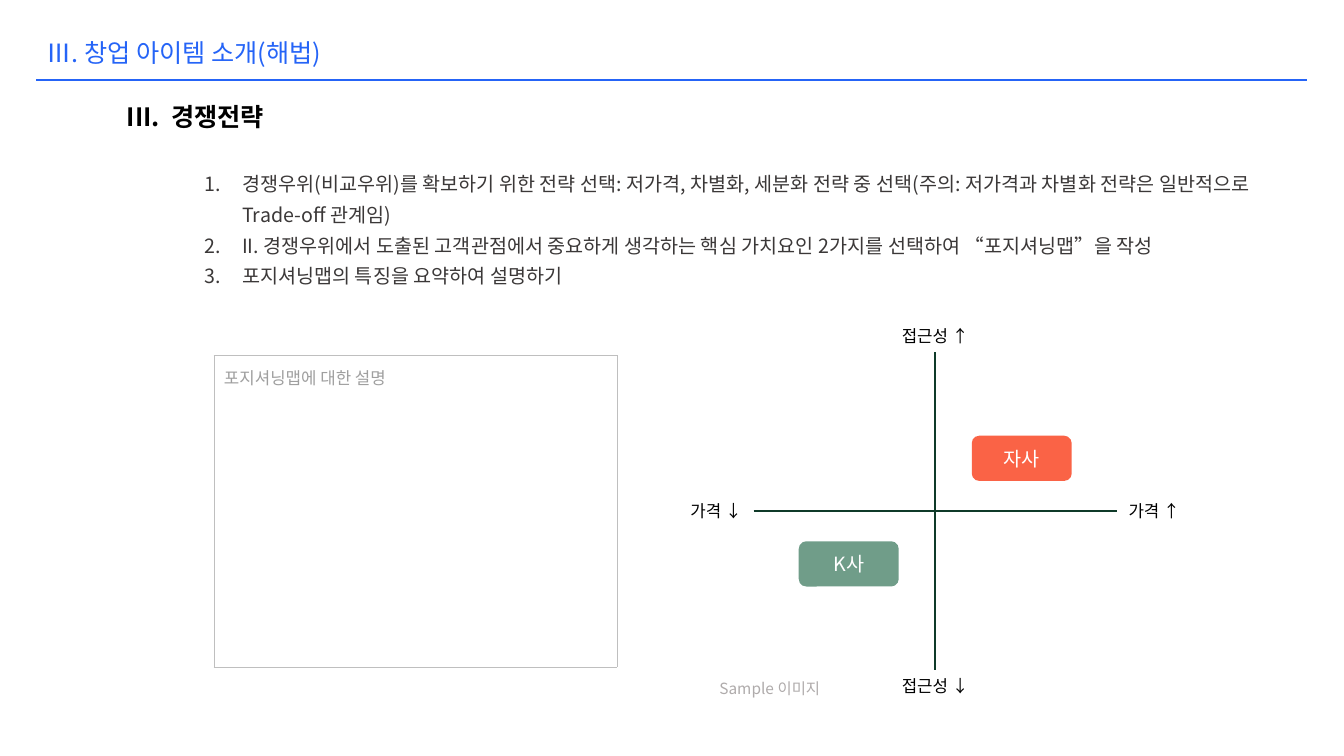
"""Build the competitive strategy slide with its positioning map."""
from lxml import etree
from pptx import Presentation
from pptx.dml.color import RGBColor
from pptx.enum import shapes, text
from pptx.oxml import ns
from pptx.util import Cm, Pt

TITLE = "Ⅲ. 창업 아이템 소개(해법)"
HEAD = "경쟁전략"
STEPS = [
    "경쟁우위(비교우위)를 확보하기 위한 전략 선택: 저가격, 차별화, 세분화 전략 중 선택"
    "(주의: 저가격과 차별화 전략은 일반적으로 Trade-off 관계임)",
    "II. 경쟁우위에서 도출된 고객관점에서 중요하게 생각하는 핵심 가치요인 2가지를 선택하여 “포지셔닝맵”을 작성",
    "포지셔닝맵의 특징을 요약하여 설명하기",
]
NOTE = "포지셔닝맵에 대한 설명"
SAMPLE = "Sample 이미지"
ENDS = [("접근성 ↑", 0, -1), ("접근성 ↓", 0, 1), ("가격 ↑", 1, 0), ("가격 ↓", -1, 0)]
FIRMS = [("K사", "rival", -1), ("자사", "own", 1)]

THEME = {
    "face": "Noto Sans CJK KR",
    "color": {"blue": "2564F7", "black": "000000", "body": "3B3838",
              "note": "9F9F9F", "edge": "BFBFBF", "axis": "0F3A29",
              "rival": "709D89", "own": "FA6346", "white": "FFFFFF",
              "sample": "AFABAB"},
    "size": {"title": 18, "list": 14, "label": 12, "sample": 11},
}
LEFT, MID = text.PP_ALIGN.LEFT, text.PP_ALIGN.CENTER
TOP, CORE = text.MSO_ANCHOR.TOP, text.MSO_ANCHOR.MIDDLE
FIT, FIXED = text.MSO_AUTO_SIZE.SHAPE_TO_FIT_TEXT, text.MSO_AUTO_SIZE.NONE

MAP_X, MAP_Y = 23.57, 12.88
HALF_X, HALF_Y = 4.58, 4.0
END_X, END_Y = 5.52, 4.4
FIRM_X, FIRM_Y = 2.18, 1.33
FIRM_W, FIRM_H = 2.52, 1.14


def rgb(name):
    return RGBColor.from_string(THEME["color"][name])


def assign(item, values):
    for key, value in values.items():
        setattr(item, key, value)


def place(item, x, y, w, h):
    box = zip(("left", "top", "width", "height"), (x, y, w, h))
    assign(item, {key: Cm(value) for key, value in box})


def write(frame, lines, size, color, bold=False, **form):
    for i, line in enumerate(lines):
        para = frame.paragraphs[0] if i == 0 else frame.add_paragraph()
        run = para.add_run()
        run.text = line
        assign(para, {"alignment": LEFT, "space_before": Pt(0), **form})
        assign(run.font, {"size": Pt(THEME["size"][size]), "bold": bold,
                          "name": THEME["face"]})
        run.font.color.rgb = rgb(color)
        east = etree.SubElement(run.font._element, ns.qn("a:ea"))
        east.set("typeface", THEME["face"])


def number(para, kind, start, indent):
    props = para._p.get_or_add_pPr()
    props.set("marL", str(Cm(indent)))
    props.set("indent", str(-Cm(indent)))
    face = etree.SubElement(props, ns.qn("a:buFont"))
    face.set("typeface", THEME["face"])
    mark = etree.SubElement(props, ns.qn("a:buAutoNum"))
    mark.set("type", kind)
    if start > 1:
        mark.set("startAt", str(start))


def label(slide, line, box, size, color, wrap=False, **form):
    shape = slide.shapes.add_textbox(*map(Cm, box))
    assign(shape.text_frame, {"word_wrap": wrap, "auto_size": FIT})
    write(shape.text_frame, [line], size, color, **form)
    return shape


def rule(slide, x1, y1, x2, y2, color, width):
    line = slide.shapes.add_connector(
        shapes.MSO_CONNECTOR.STRAIGHT, *map(Cm, (x1, y1, x2, y2)))
    line.line.color.rgb = rgb(color)
    line.line.width = Pt(width)
    etree.SubElement(line._element.spPr, ns.qn("a:effectLst"))


def panel(slide):
    frame = slide.shapes.add_table(1, 1, *map(Cm, (5.39, 8.96, 10.16, 7.85)))
    assign(frame.table, {"first_row": False, "horz_banding": False})
    cell = frame.table.cell(0, 0)
    cell.fill.background()
    write(cell.text_frame, [NOTE], "label", "note", line_spacing=1.2)
    props = cell._tc.get_or_add_tcPr()
    for i, side in enumerate(("lnL", "lnR", "lnT", "lnB")):
        edge = etree.Element(ns.qn("a:" + side), w=str(Pt(0.5)))
        fill = etree.SubElement(edge, ns.qn("a:solidFill"))
        etree.SubElement(fill, ns.qn("a:srgbClr"), val=THEME["color"]["edge"])
        props.insert(i, edge)


def chart(slide):
    rule(slide, MAP_X, MAP_Y - HALF_Y, MAP_X, MAP_Y + HALF_Y, "axis", 1.25)
    rule(slide, MAP_X - HALF_X, MAP_Y, MAP_X + HALF_X, MAP_Y, "axis", 1.25)
    for line, dx, dy in ENDS:
        wide, high = (1.93 if dx else 2.36), 0.77
        box = (MAP_X + dx * END_X - wide / 2,
               MAP_Y + dy * END_Y - high / 2, wide, high)
        label(slide, line, box, "label", "black", alignment=MID)
    for line, color, side in FIRMS:
        box = (MAP_X + side * FIRM_X - FIRM_W / 2,
               MAP_Y - side * FIRM_Y - FIRM_H / 2, FIRM_W, FIRM_H)
        firm = slide.shapes.add_shape(
            shapes.MSO_SHAPE.ROUNDED_RECTANGLE, *map(Cm, box))
        firm.shadow.inherit = False
        firm.fill.solid()
        firm.fill.fore_color.rgb = rgb(color)
        firm.line.fill.background()
        firm.text_frame.vertical_anchor = CORE
        write(firm.text_frame, [line], "list", "white", alignment=MID)


def main():
    deck = Presentation()
    assign(deck, {"slide_width": Cm(33.87), "slide_height": Cm(19.05)})
    slide = deck.slides.add_slide(deck.slide_layouts[1])
    title, body = slide.placeholders
    rule(slide, 0.91, 2.01, 32.94, 2.01, "blue", 1.5)
    place(title, 0.91, 0.81, 11.35, 1.32)
    place(body, 4.9, 4.04, 26.92, 3.3)
    for item in (title, body):
        assign(item.text_frame, {"vertical_anchor": TOP, "word_wrap": True,
                                 "auto_size": FIXED})
    write(title.text_frame, [TITLE], "title", "blue")
    head = label(slide, HEAD, (2.95, 2.44, 4.19, 1.02), "title", "black", bold=True)
    number(head.text_frame.paragraphs[0], "romanUcPeriod", 3, 1.12)
    write(body.text_frame, STEPS, "list", "body", line_spacing=1.3)
    for para in body.text_frame.paragraphs:
        number(para, "arabicPeriod", 1, 0.95)
    panel(slide)
    chart(slide)
    label(slide, SAMPLE, (17.88, 16.99, 4.01, 0.74), "sample", "sample", wrap=True)
    deck.save("out.pptx")


if __name__ == "__main__":
    main()
